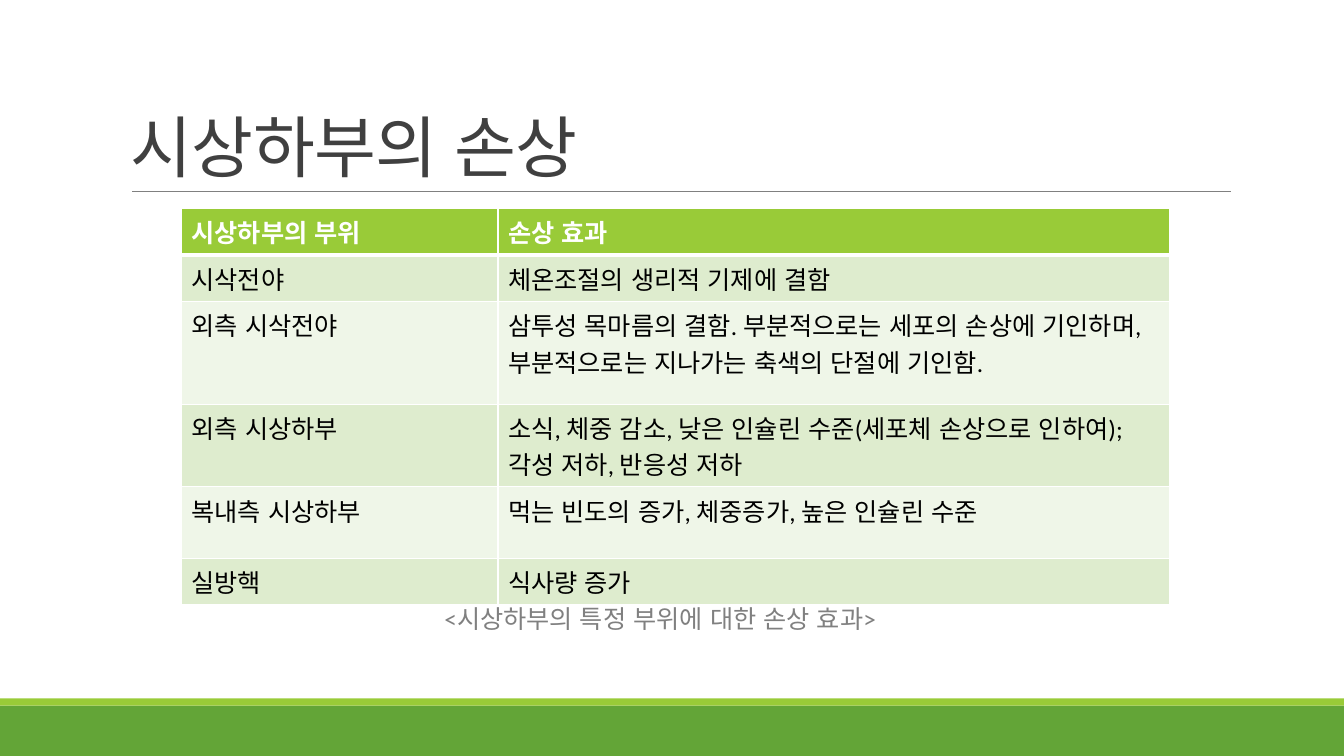
import lxml.etree
import pptx
import pptx.dml.color
import pptx.enum.lang
import pptx.enum.shapes
import pptx.enum.text
import pptx.oxml.ns
import pptx.util

RGBColor = pptx.dml.color.RGBColor
GREEN = RGBColor(0x63, 0xA5, 0x37)
LIME = RGBColor(0x99, 0xCB, 0x38)
BAND_DARK = RGBColor(0xDE, 0xEC, 0xCE)
BAND_LIGHT = RGBColor(0xEF, 0xF6, 0xE8)
WHITE = RGBColor(0xFF, 0xFF, 0xFF)
BLACK = RGBColor(0, 0, 0)
TITLE_GRAY = RGBColor(0x40, 0x40, 0x40)
GRAY = RGBColor(0x80, 0x80, 0x80)

FONT = "Calibri"
WIDTH, HEIGHT = 13.33, 7.5
COLUMN_WIDTHS = (3.14, 6.66)
ROW_HEIGHTS = (0.46, 0.46, 1.02, 0.82, 0.71, 0.46)
DAMAGE_EFFECTS = (
    ("시상하부의 부위", "손상 효과"),
    ("시삭전야", "체온조절의 생리적 기제에 결함"),
    ("외측 시삭전야", "삼투성 목마름의 결함. 부분적으로는 세포의 손상에 기인하며, "
     "부분적으로는 지나가는 축색의 단절에 기인함."),
    ("외측 시상하부", "소식, 체중 감소, 낮은 인슐린 수준(세포체 손상으로 인하여); "
     "각성 저하, 반응성 저하"),
    ("복내측 시상하부", "먹는 빈도의 증가, 체중증가, 높은 인슐린 수준"),
    ("실방핵", "식사량 증가"),
)


def inches(*lengths):
    """Convert lengths in inches to slide units."""
    return [pptx.util.Inches(length) for length in lengths]


def style_paragraph(paragraph, size, color, bold=False):
    """Set the font of a whole paragraph and mark its text as Korean."""
    paragraph.font.name = FONT
    paragraph.font.size = pptx.util.Pt(size)
    paragraph.font.color.rgb = color
    paragraph.font.bold = bold
    for run in paragraph.runs:
        run.font.language_id = pptx.enum.lang.MSO_LANGUAGE_ID.KOREAN


def add_band(slide, top, height, color):
    """Add a full-width footer band."""
    band = slide.shapes.add_shape(
        pptx.enum.shapes.MSO_SHAPE.RECTANGLE, *inches(0, top, WIDTH, height))
    band.shadow.inherit = False
    band.fill.solid()
    band.fill.fore_color.rgb = color
    band.line.fill.background()


def add_rule(slide, left, right, y):
    """Add the thin rule under the title."""
    rule = slide.shapes.add_connector(
        pptx.enum.shapes.MSO_CONNECTOR.STRAIGHT, *inches(left, y, right, y))
    rule.line.color.rgb = GRAY
    rule.line.width = pptx.util.Pt(0.5)
    lxml.etree.SubElement(rule._element.spPr, pptx.oxml.ns.qn("a:effectLst"))


def add_text(slide, box, text, size, color, wrap):
    """Add a one-paragraph text box and return its frame."""
    frame = slide.shapes.add_textbox(*inches(*box)).text_frame
    frame.word_wrap = wrap
    frame.text = text
    style_paragraph(frame.paragraphs[0], size, color)
    return frame


def add_title(slide, text):
    """Add the bottom-anchored slide title."""
    frame = add_text(slide, (1.2, 0.31, 11, 1.59), text, 48, TITLE_GRAY, True)
    frame.vertical_anchor = pptx.enum.text.MSO_ANCHOR.BOTTOM
    heading = frame.paragraphs[0]
    heading.line_spacing = 0.85
    heading.runs[0].font._element.set("spc", "-50")


def set_borders(cell, top, bottom):
    """Give a cell white borders of the given point widths."""
    properties = cell._tc.get_or_add_tcPr()
    sides = (("L", 1), ("R", 1), ("T", top), ("B", bottom))
    for position, (side, width) in enumerate(sides):
        border = lxml.etree.Element(
            pptx.oxml.ns.qn(f"a:ln{side}"), w=str(pptx.util.Pt(width)))
        fill = lxml.etree.SubElement(border, pptx.oxml.ns.qn("a:solidFill"))
        lxml.etree.SubElement(
            fill, pptx.oxml.ns.qn("a:srgbClr"), val=str(WHITE))
        properties.insert(position, border)


def add_effects_table(slide, left, top):
    """Add the table of hypothalamic regions and damage effects."""
    table = slide.shapes.add_table(
        len(ROW_HEIGHTS), len(COLUMN_WIDTHS),
        *inches(left, top, sum(COLUMN_WIDTHS), sum(ROW_HEIGHTS))).table
    for column, width in zip(table.columns, COLUMN_WIDTHS):
        column.width = pptx.util.Inches(width)
    for number, (row, height) in enumerate(zip(table.rows, ROW_HEIGHTS)):
        row.height = pptx.util.Inches(height)
        header = number == 0
        band = LIME if header else (BAND_LIGHT, BAND_DARK)[number % 2]
        for cell, text in zip(row.cells, DAMAGE_EFFECTS[number]):
            cell.text = text
            style_paragraph(cell.text_frame.paragraphs[0], 18,
                            WHITE if header else BLACK, header)
            cell.fill.solid()
            cell.fill.fore_color.rgb = band
            set_borders(cell, 3 if number == 1 else 1, 3 if header else 1)


def main():
    """Build and save the slide."""
    deck = pptx.Presentation()
    deck.slide_width, deck.slide_height = inches(WIDTH, HEIGHT)
    slide = deck.slides.add_slide(deck.slide_layouts[6])
    add_band(slide, 7, 0.5, GREEN)
    add_band(slide, 6.93, 0.07, LIME)
    add_rule(slide, 1.31, 12.21, 1.9)
    add_title(slide, "시상하부의 손상")
    add_effects_table(slide, 1.8, 2.07)
    caption = add_text(slide, (4.31, 5.94, 4.78, 0.4),
                       "<시상하부의 특정 부위에 대한 손상 효과>", 18, GRAY, False)
    caption.auto_size = pptx.enum.text.MSO_AUTO_SIZE.SHAPE_TO_FIT_TEXT
    deck.save("out.pptx")


if __name__ == "__main__":
    main()
